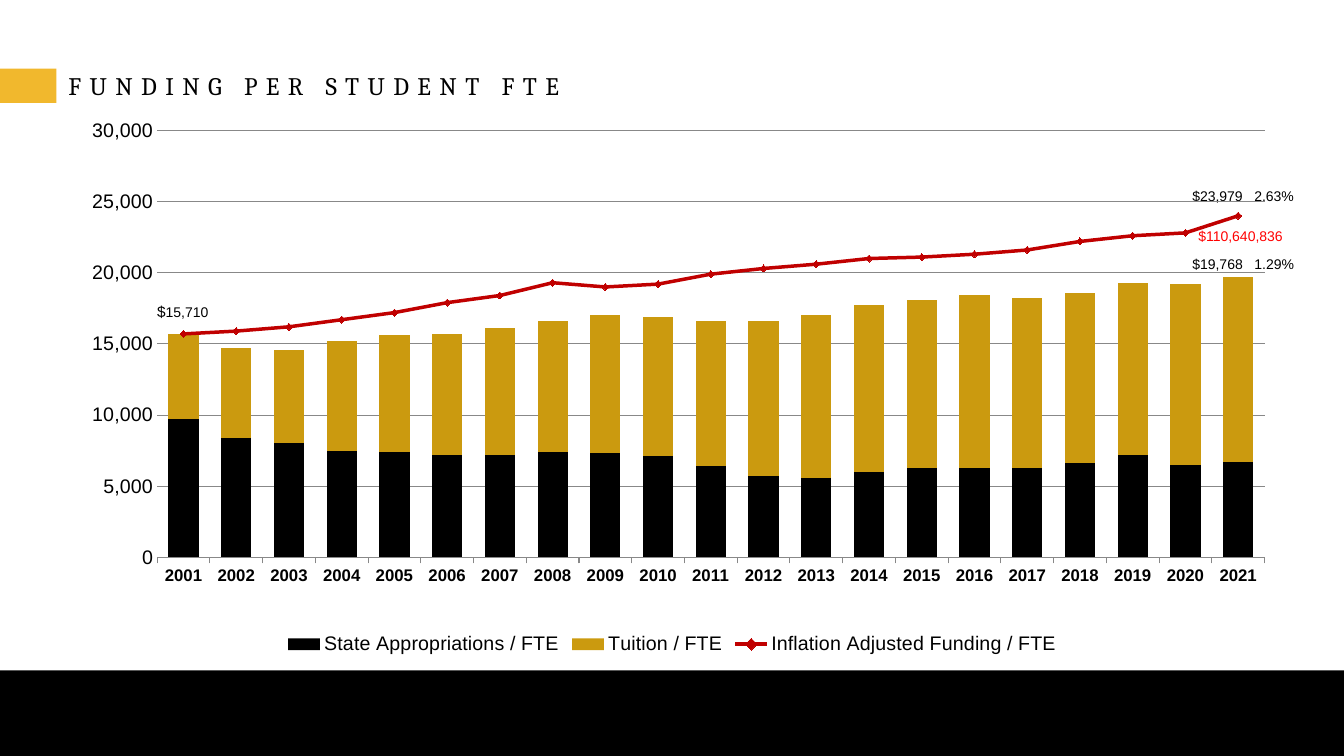
from lxml import etree
from pptx import Presentation
from pptx.chart.data import CategoryChartData
from pptx.dml.color import RGBColor
from pptx.enum.chart import XL_CHART_TYPE, XL_LEGEND_POSITION, XL_MARKER_STYLE, XL_TICK_MARK
from pptx.enum.shapes import MSO_SHAPE
from pptx.enum.text import MSO_ANCHOR
from pptx.oxml import parse_xml
from pptx.oxml.ns import nsdecls, qn
from pptx.util import Pt

STACKED = XL_CHART_TYPE.COLUMN_STACKED
BOTTOM = XL_LEGEND_POSITION.BOTTOM
DIAMOND = XL_MARKER_STYLE.DIAMOND
TICK_NONE, TICK_OUT = XL_TICK_MARK.NONE, XL_TICK_MARK.OUTSIDE
RECT = MSO_SHAPE.RECTANGLE
TOP, MIDDLE = MSO_ANCHOR.TOP, MSO_ANCHOR.MIDDLE

BLACK, YELLOW, GOLD = "000000", "F1B82D", "CB9A0F"
CRIMSON, RED, GRAY = "C00000", "FF0000", "888888"
YEARS = range(2001, 2022)
STATE = [9700, 8400, 8000, 7500, 7400, 7200, 7200, 7400, 7300, 7100, 6400,
         5700, 5600, 6000, 6300, 6300, 6300, 6600, 7200, 6500, 6700]
TUITION = [6000, 6300, 6600, 7700, 8200, 8500, 8900, 9200, 9700, 9800, 10200,
           10900, 11400, 11700, 11800, 12100, 11900, 12000, 12100, 12700, 13000]
INFLATION = [15700, 15900, 16200, 16700, 17200, 17900, 18400, 19300, 19000, 19200, 19900,
             20300, 20600, 21000, 21100, 21300, 21600, 22200, 22600, 22800, 24000]
PLOT_AREA = {"x": 0.079, "y": 0.06, "w": 0.905, "h": 0.759}


def rgb(color):
    return RGBColor.from_string(color)


def paint(fill, color):
    fill.solid()
    fill.fore_color.rgb = rgb(color)


def style_font(font, size, color=BLACK, name="Arial", bold=False):
    font.size, font.name, font.bold = Pt(size), name, bold
    font.color.rgb = rgb(color)


def add_rect(slide, x, y, w, h, color):
    sp = slide.shapes.add_shape(RECT, Pt(x), Pt(y), Pt(w), Pt(h))
    sp.shadow.inherit = False
    paint(sp.fill, color)
    sp.line.fill.background()


def add_text(slide, x, y, w, h, runs, color=BLACK, name="Arial", anchor=TOP, spacing=0, tab=0):
    tf = slide.shapes.add_textbox(Pt(x), Pt(y), Pt(w), Pt(h)).text_frame
    tf.word_wrap = True
    tf.vertical_anchor = anchor
    p = tf.paragraphs[0]
    if tab:
        tabs = etree.SubElement(p._p.get_or_add_pPr(), qn("a:tabLst"))
        etree.SubElement(tabs, qn("a:tab"), pos=str(Pt(tab)), algn="l")
    for text, size in runs:
        r = p.add_run()
        r.text = text
        style_font(r.font, size, color, name)
        if spacing:
            r.font._element.set("spc", str(spacing * 100))


def set_plot_area(plot_area):
    for layout in plot_area.findall(qn("c:layout")):
        plot_area.remove(layout)
    modes = "".join(f'<c:{k}Mode val="edge"/>' for k in "xy")
    sizes = "".join(f'<c:{k} val="{v}"/>' for k, v in PLOT_AREA.items())
    plot_area.insert(0, parse_xml(
        f'<c:layout {nsdecls("c")}><c:manualLayout><c:layoutTarget val="inner"/>'
        f'{modes}{sizes}</c:manualLayout></c:layout>'))


def move_last_series_to_line(plot_area):
    bars = plot_area.find(qn("c:barChart"))
    ser = bars.findall(qn("c:ser"))[-1]
    for invert in ser.findall(qn("c:invertIfNegative")):
        ser.remove(invert)
    line = parse_xml(f'<c:lineChart {nsdecls("c")}><c:grouping val="standard"/>'
                     '<c:varyColors val="0"/></c:lineChart>')
    line.append(ser)
    etree.SubElement(line, qn("c:marker"), val="1")
    for axis in bars.findall(qn("c:axId")):
        etree.SubElement(line, qn("c:axId"), val=axis.get("val"))
    bars.addnext(line)


def style_axes(chart):
    years, dollars = chart.category_axis, chart.value_axis
    style_font(years.tick_labels.font, 12, bold=True)
    years.major_tick_mark = TICK_OUT
    years.format.line.color.rgb = rgb(GRAY)
    style_font(dollars.tick_labels.font, 14)
    dollars.tick_labels.number_format = "#,##0"
    dollars.tick_labels.number_format_is_linked = False
    dollars.minimum_scale, dollars.maximum_scale, dollars.major_unit = 0, 30000, 5000
    dollars.major_tick_mark = TICK_NONE
    dollars.format.line.fill.background()
    dollars.major_gridlines.format.line.color.rgb = rgb(GRAY)
    dollars.major_gridlines.format.line.width = Pt(0.75)


def style_line(series):
    series.smooth = False
    series.format.line.color.rgb = rgb(CRIMSON)
    series.format.line.width = Pt(2.5)
    series.marker.style, series.marker.size = DIAMOND, 5
    paint(series.marker.format.fill, CRIMSON)
    series.marker.format.line.color.rgb = rgb(CRIMSON)


def add_funding_chart(slide, x, y, w, h):
    data = CategoryChartData(number_format="#,##0")
    data.categories = [str(year) for year in YEARS]
    data.add_series("State Appropriations / FTE", STATE)
    data.add_series("Tuition / FTE", TUITION)
    data.add_series("Inflation Adjusted Funding / FTE", INFLATION)
    chart = slide.shapes.add_chart(STACKED, Pt(x), Pt(y), Pt(w), Pt(h), data).chart
    style_font(chart.font, 18)
    chart.has_title = False
    chart.has_legend = True
    chart.legend.position = BOTTOM
    chart.legend.include_in_layout = False
    style_font(chart.legend.font, 14)
    style_axes(chart)
    plot_area = chart.element.find(".//" + qn("c:plotArea"))
    set_plot_area(plot_area)
    move_last_series_to_line(plot_area)
    bars, line = chart.plots
    bars.gap_width, bars.overlap = 75, 100
    bars.vary_by_categories = False
    for series, color in zip(bars.series, (BLACK, GOLD)):
        paint(series.format.fill, color)
    style_line(line.series[0])


def main():
    prs = Presentation()
    prs.slide_width, prs.slide_height = Pt(960), Pt(540)
    slide = prs.slides.add_slide(prs.slide_layouts[6])
    add_rect(slide, 0, 478.8, 960, 61.2, BLACK)
    add_rect(slide, 0, 49, 40.3, 24.5, YELLOW)
    add_text(slide, 41.8, 49, 874, 24.5, [("FUNDING PER STUDENT FTE", 18)],
             name="Cambria", anchor=MIDDLE, spacing=6)
    add_text(slide, 848.9, 159.1, 90, 19.4, [("$110,640,836", 10)], RED)
    add_text(slide, 105.1, 212.4, 60.5, 20.9, [("$", 11), ("15,710", 10)])
    add_text(slide, 844.6, 130.3, 98.6, 19.4, [("$23,979\t2.63%", 10)], tab=44.3)
    add_text(slide, 844.6, 179.3, 90, 19.4, [("$19,768\t1.29%", 10)], tab=44.3)
    add_funding_chart(slide, 43.2, 69.1, 874.1, 401.8)
    prs.save("out.pptx")


if __name__ == "__main__":
    main()
